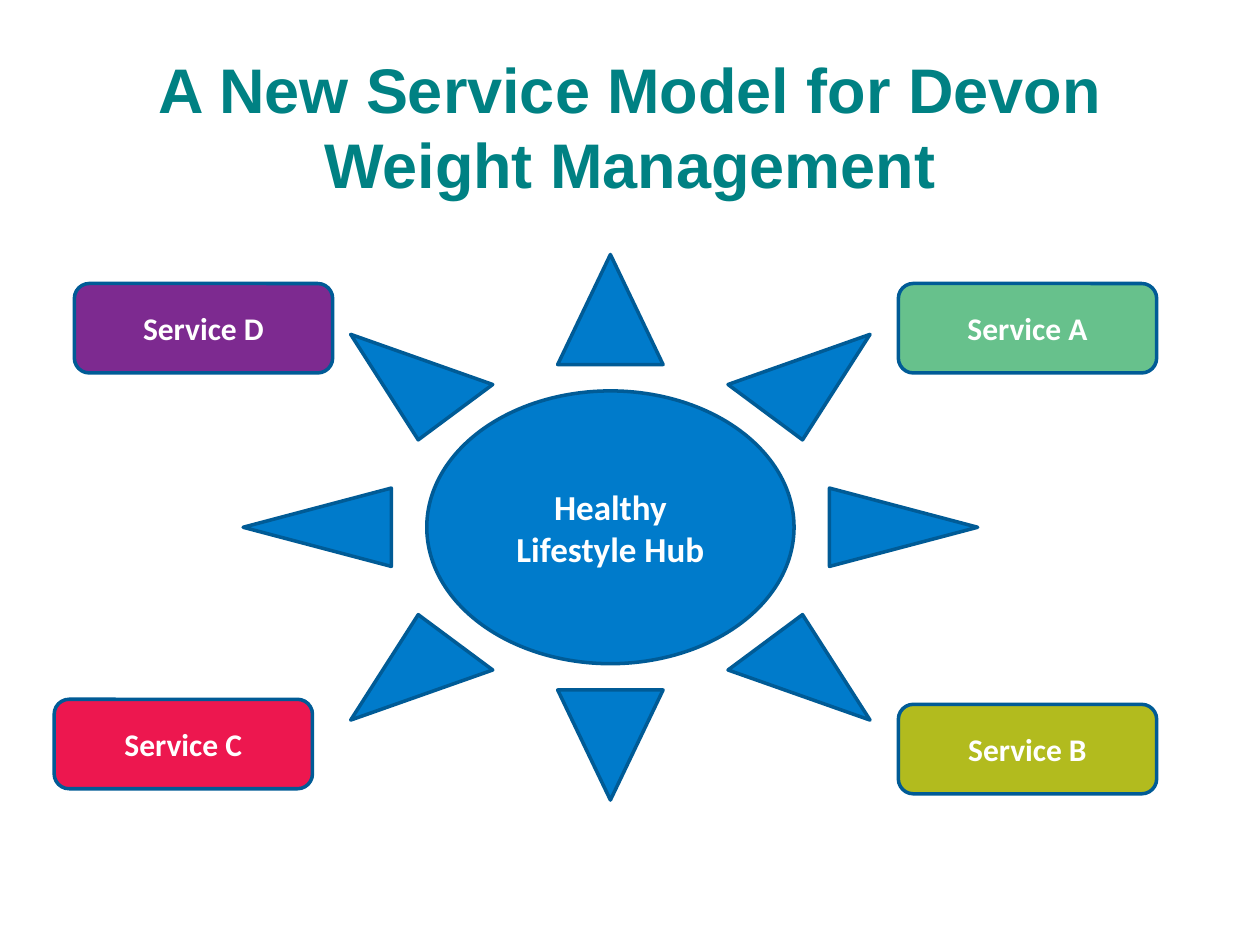
from pptx import Presentation
from pptx import util as u
from pptx.dml import color
from pptx.enum import shapes, text

COLORS = {
    "title": "008183",
    "hub": "007BCB",
    "outline": "005B96",
    "label": "FFFFFF",
    "green": "67C18C",
    "purple": "7D2A90",
    "olive": "B2BB1E",
    "red": "ED174F",
}


def rgb(name):
    return color.RGBColor.from_string(COLORS[name])


class SlideBuilder:
    title_font = "Arial"
    label_font = "Calibri"
    outline_width = u.Pt(2)

    def __init__(self, slide):
        self.slide = slide

    def set_text(self, frame, wording, font_name, size, ink):
        frame.word_wrap = True
        frame.vertical_anchor = text.MSO_ANCHOR.MIDDLE
        paragraph = frame.paragraphs[0]
        paragraph.text = wording
        paragraph.alignment = text.PP_ALIGN.CENTER
        font = paragraph.font
        font.name, font.size, font.bold = font_name, u.Pt(size), True
        font.color.rgb = rgb(ink)

    def title(self, wording, box):
        heading = self.slide.shapes.add_textbox(*map(u.Inches, box))
        self.set_text(heading.text_frame, wording, self.title_font, 36, "title")

    def shape(self, preset, wording, box, fill, size):
        part = self.slide.shapes.add_shape(preset, *map(u.Inches, box))
        part.shadow.inherit = False
        part.fill.solid()
        part.fill.fore_color.rgb = rgb(fill)
        part.line.color.rgb = rgb("outline")
        part.line.width = self.outline_width
        self.set_text(part.text_frame, wording, self.label_font, size, "label")

    def hub(self, wording, box):
        self.shape(shapes.MSO_SHAPE.SUN, wording, box, "hub", 20)

    def service(self, wording, left, top, fill):
        box = (left, top, 2.05, 0.71)
        self.shape(shapes.MSO_SHAPE.ROUNDED_RECTANGLE, wording, box, fill, 18)


def main():
    deck = Presentation()
    deck.slide_width, deck.slide_height = u.Inches(10), u.Inches(7.5)
    builder = SlideBuilder(deck.slides.add_slide(deck.slide_layouts[6]))

    # Heading
    builder.title("A New Service Model for Devon\vWeight Management", (0.5, 0.3, 9, 1.4))

    # Central hub
    builder.hub("Healthy Lifestyle Hub", (1.93, 2.02, 5.83, 4.33))

    # Services around the hub
    services = [
        ("Service A", 7.13, 2.25, "green"),
        ("Service D", 0.59, 2.25, "purple"),
        ("Service B", 7.13, 5.59, "olive"),
        ("Service C", 0.43, 5.55, "red"),
    ]
    for service in services:
        builder.service(*service)

    deck.save("out.pptx")


if __name__ == "__main__":
    main()
